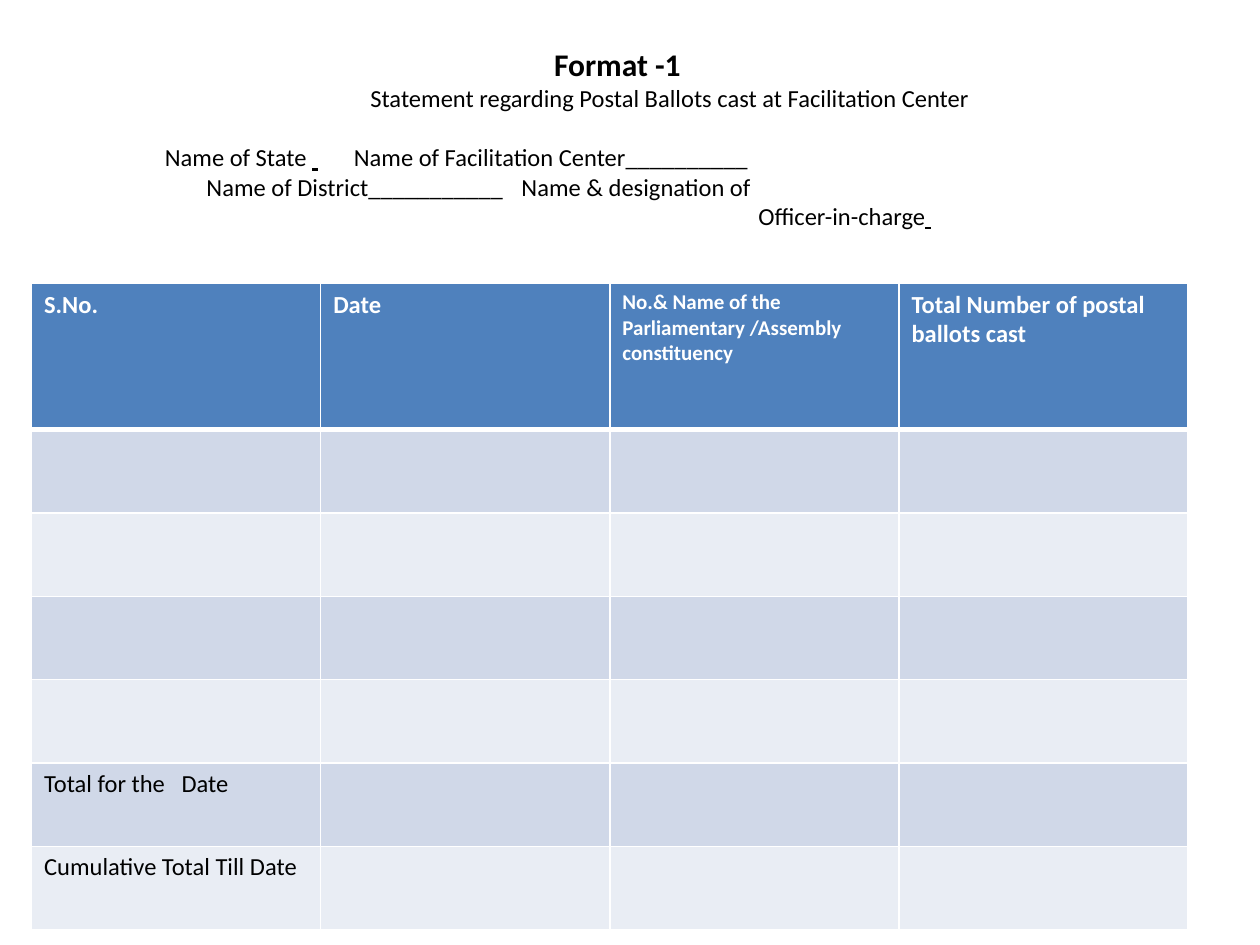
from lxml import etree
from pptx import Presentation
from pptx.dml.color import RGBColor
from pptx.enum.text import PP_ALIGN
from pptx.oxml.ns import qn
from pptx.util import Inches, Pt

LEFT = PP_ALIGN.LEFT
CENTER = PP_ALIGN.CENTER
BLACK, WHITE, BLUE = "000000", "FFFFFF", "4F81BD"
BANDS = ["D0D8E8", "E9EDF4"]

LINES = [
    {"indent": 0.05, "align": CENTER, "size": 18, "bold": True,
     "runs": [("Format -1", False)]},
    {"indent": 2.59,
     "runs": [("Statement regarding Postal Ballots cast at Facilitation Center", False)]},
    {"indent": 0.96, "tab": 4.96, "gap": 17,
     "runs": [("Name of State ", False), (" ", True),
              ("\tName of Facilitation Center__________", False)]},
    {"indent": 1.29, "tab": 5.93,
     "runs": [("Name of District___________", False),
              ("\tName & designation of", False)]},
    {"indent": 5.67, "runs": [("Officer-in-charge", False), (" ", True)]},
]

HEADS = [
    ("S.No.", 14),
    ("Date", 14),
    ("No.& Name of the Parliamentary /Assembly constituency", 12),
    ("Total Number of postal ballots cast", 14),
]
LABELS = ["", "", "", "", "Total for the   Date", "Cumulative Total Till Date"]


def color(code):
    return RGBColor.from_string(code)


def style(run, code, **form):
    for key, value in {"name": "Calibri", **form}.items():
        setattr(run.font, key, value)
    run.font.color.rgb = color(code)


def indent(para, left, tab=None):
    props = para._p.get_or_add_pPr()
    props.set("marL", str(Inches(left)))
    props.set("indent", "0")
    if tab:
        tabs = etree.SubElement(props, qn("a:tabLst"))
        etree.SubElement(tabs, qn("a:tab"), pos=str(Inches(tab)), algn="l")


def border(cell, widths):
    props = cell._tc.get_or_add_tcPr()
    for side, width in zip("LRTB", widths):
        line = etree.SubElement(props, qn("a:ln" + side), w=str(Pt(width)))
        fill = etree.SubElement(line, qn("a:solidFill"))
        etree.SubElement(fill, qn("a:srgbClr"), val=WHITE)


def add_head(slide, left, top, width, height):
    frame = slide.shapes.add_textbox(left, top, width, height).text_frame
    frame.word_wrap = True
    for row, line in enumerate(LINES):
        para = frame.add_paragraph() if row else frame.paragraphs[0]
        para.alignment = line.get("align", LEFT)
        para.space_before = Pt(line.get("gap", 0))
        indent(para, line["indent"], line.get("tab"))
        for text, under in line["runs"]:
            run = para.add_run()
            run.text = text
            style(run, BLACK, size=Pt(line.get("size", 14)),
                  bold=line.get("bold", False), underline=under)


def fill_cell(cell, text, size, ink, back, bold, widths):
    border(cell, widths)
    cell.fill.solid()
    cell.fill.fore_color.rgb = color(back)
    if text:
        run = cell.text_frame.paragraphs[0].add_run()
        run.text = text
        style(run, ink, size=Pt(size), bold=bold)


def add_grid(slide, left, top, width, height):
    count = len(LABELS)
    table = slide.shapes.add_table(
        count + 1, len(HEADS), left, top, width, height).table
    first = Inches(1.16)
    table.rows[0].height = first
    for col, (text, size) in enumerate(HEADS):
        fill_cell(table.cell(0, col), text, size, WHITE, BLUE, True, (1, 1, 1, 3))
    for row, label in enumerate(LABELS):
        table.rows[row + 1].height = (height - first) // count
        widths = (1, 1, 1 if row else 3, 1)
        for col in range(len(HEADS)):
            fill_cell(table.cell(row + 1, col), "" if col else label, 14,
                      BLACK, BANDS[row % 2], False, widths)


def main():
    deck = Presentation()
    deck.slide_width, deck.slide_height = Inches(10), Inches(7.5)
    slide = deck.slides.add_slide(deck.slide_layouts[6])
    add_head(slide, Inches(0.25), Inches(0.31), Inches(9.25), Inches(1.65))
    add_grid(slide, Inches(0.25), Inches(2.25), Inches(9.18), Inches(5.13))
    deck.save("out.pptx")


if __name__ == "__main__":
    main()
